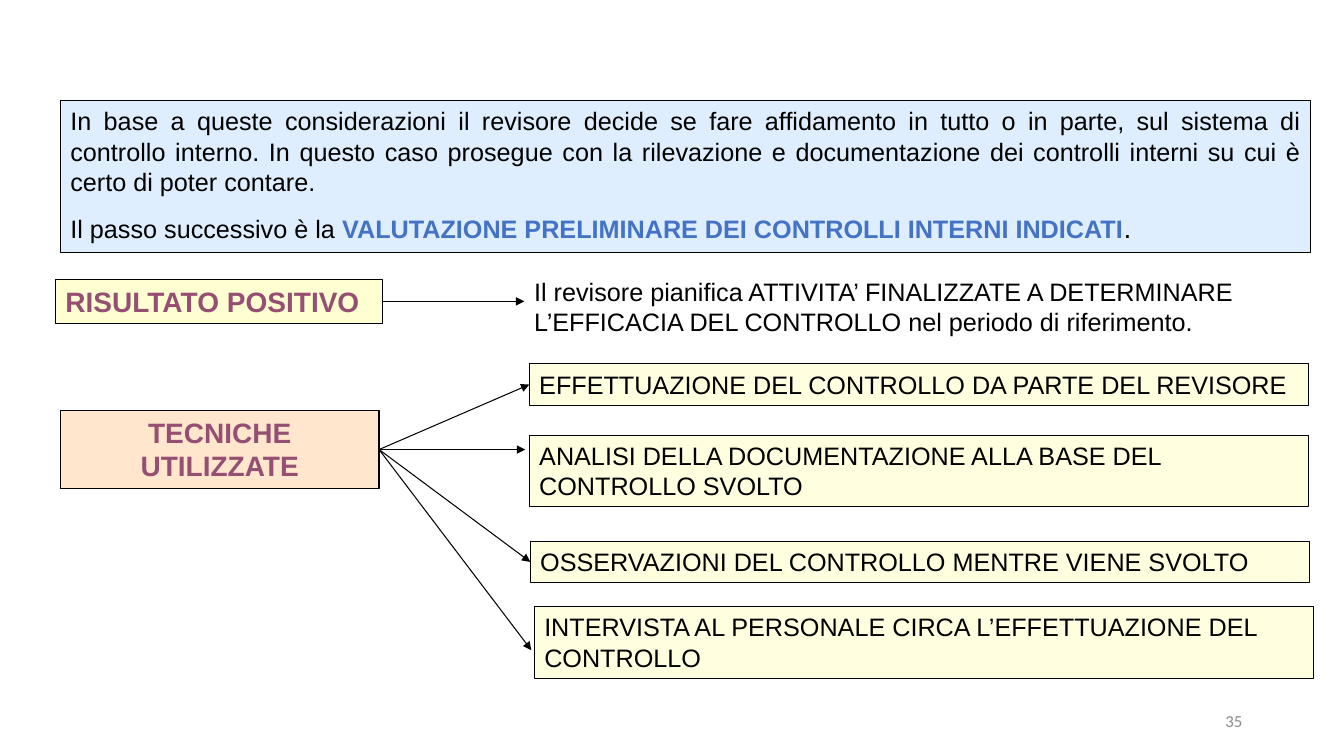
import dataclasses
import typing

import lxml.etree
import pptx
import pptx.dml.color
import pptx.enum.shapes
import pptx.enum.text
import pptx.oxml.ns
import pptx.util

Inches = pptx.util.Inches
Align = pptx.enum.text.PP_ALIGN
Point = tuple[float, float]
LEFT_SIDE, RIGHT_SIDE = 1, 3

BLACK, BLUE, PLUM, GREY = "000000", "4472C4", "954F72", "8C8C8C"


@dataclasses.dataclass
class Span:
    text: str
    color: str = BLACK
    size: float = 18
    bold: bool = False


@dataclasses.dataclass
class Box:
    left: float
    top: float
    width: float
    height: float
    paragraphs: list[list[Span]]
    fill: str | None = None
    opacity: int = 100
    align: Align = Align.LEFT
    font: str = "Arial"
    anchor: pptx.enum.text.MSO_ANCHOR = pptx.enum.text.MSO_ANCHOR.TOP


@dataclasses.dataclass
class Arrow:
    start_box: typing.Any
    end: Point
    end_box: typing.Any = None


def rgb(color: str) -> pptx.dml.color.RGBColor:
    return pptx.dml.color.RGBColor.from_string(color)


def add_element(parent, tag: str, **attributes: str):
    return lxml.etree.SubElement(parent, pptx.oxml.ns.qn(tag), attributes)


def set_font(font, span: Span, name: str) -> None:
    font.name = name
    font.size = pptx.util.Pt(span.size)
    font.bold = span.bold
    font.color.rgb = rgb(span.color)


def write_text(frame, box: Box) -> None:
    frame.word_wrap = True
    frame.vertical_anchor = box.anchor
    for index, spans in enumerate(box.paragraphs):
        para = frame.add_paragraph() if index else frame.paragraphs[0]
        para.alignment = box.align
        if index:
            para.space_before = pptx.util.Pt(10)
        for span in spans:
            run = para.add_run()
            run.text = span.text
            if len(spans) > 1:
                set_font(run.font, span, box.font)
        if len(spans) == 1:
            set_font(para.font, spans[0], box.font)


def add_box(page, box: Box):
    """Draw an outlined box, or a plain text box when it has no fill."""
    place = [Inches(n) for n in (box.left, box.top, box.width, box.height)]
    if box.fill is None:
        shape = page.shapes.add_textbox(*place)
    else:
        shape = page.shapes.add_shape(pptx.enum.shapes.MSO_SHAPE.RECTANGLE, *place)
        shape.shadow.inherit = False
        shape.fill.solid()
        shape.fill.fore_color.rgb = rgb(box.fill)
        color = shape.fill._xPr.find(".//" + pptx.oxml.ns.qn("a:srgbClr"))
        add_element(color, "a:alpha", val=str(box.opacity * 1000))
        shape.line.color.rgb = rgb(BLACK)
        shape.line.width = pptx.util.Pt(0.75)
    write_text(shape.text_frame, box)
    return shape


def add_arrow(page, arrow: Arrow) -> None:
    """Draw from the right side of one box to a point or the left side of another."""
    x, y = (Inches(n) for n in arrow.end)
    line = page.shapes.add_connector(pptx.enum.shapes.MSO_CONNECTOR.STRAIGHT, 0, 0, x, y)
    line.begin_connect(arrow.start_box, RIGHT_SIDE)
    if arrow.end_box is not None:
        line.end_connect(arrow.end_box, LEFT_SIDE)
    line.line.color.rgb = rgb(BLACK)
    line.line.width = pptx.util.Pt(0.75)
    add_element(line.line._get_or_add_ln(), "a:tailEnd", type="triangle")
    add_element(line._element.spPr, "a:effectLst")


def technique(left: float, top: float, height: float, text: str) -> Box:
    return Box(left, top, 7.73, height, [[Span(text)]], "FFFF99", 31)


INTRO = Box(0.6, 1, 12.4, 1.51, [
    [Span("In base a queste considerazioni il revisore decide se fare affidamento in tutto "
          "o in parte, sul sistema di controllo interno. In questo caso prosegue con la "
          "rilevazione e documentazione dei controlli interni su cui è certo di poter contare.")],
    [Span("Il passo successivo è la "),
     Span("VALUTAZIONE PRELIMINARE DEI CONTROLLI INTERNI INDICATI", BLUE, bold=True),
     Span(".", size=20)],
], "99CCFF", 32, Align.JUSTIFY)
RESULT = Box(0.55, 2.77, 3.24, 0.44,
             [[Span("RISULTATO POSITIVO", PLUM, 20, True)]], "FFFF99", 44)
PLAN = Box(5.2, 2.69, 7.7, 0.7, [[Span(
    "Il revisore pianifica ATTIVITA’ FINALIZZATE A DETERMINARE L’EFFICACIA DEL CONTROLLO "
    "nel periodo di riferimento.")]])
METHODS = Box(0.6, 4.07, 3.16, 0.78,
              [[Span("TECNICHE UTILIZZATE", PLUM, 20, True)]], "FFCC99", 49, Align.CENTER)
TECHNIQUES = [
    technique(5.25, 3.61, 0.41, "EFFETTUAZIONE DEL CONTROLLO DA PARTE DEL REVISORE"),
    technique(5.25, 4.32, 0.71, "ANALISI DELLA DOCUMENTAZIONE ALLA BASE DEL CONTROLLO SVOLTO"),
    technique(5.26, 5.37, 0.41, "OSSERVAZIONI DEL CONTROLLO MENTRE VIENE SVOLTO"),
    technique(5.3, 6.02, 0.71, "INTERVISTA AL PERSONALE CIRCA L’EFFETTUAZIONE DEL CONTROLLO"),
]
PAGE_NUMBER = Box(9.42, 6.95, 3, 0.4, [[Span("35", GREY, 12)]], align=Align.RIGHT,
                  font="Calibri", anchor=pptx.enum.text.MSO_ANCHOR.MIDDLE)


def main() -> None:
    deck = pptx.Presentation()
    deck.slide_width, deck.slide_height = Inches(13.33), Inches(7.5)
    page = deck.slides.add_slide(deck.slide_layouts.get_by_name("Blank"))

    add_box(page, INTRO)
    result = add_box(page, RESULT)
    add_box(page, PLAN)
    methods = add_box(page, METHODS)
    performing, _, observing, _ = [add_box(page, box) for box in TECHNIQUES]
    add_box(page, PAGE_NUMBER)

    for arrow in (
        Arrow(result, (5.2, 2.99)),
        Arrow(methods, (5.25, 3.82), performing),
        Arrow(methods, (5.21, 4.46)),
        Arrow(methods, (5.26, 5.58), observing),
        Arrow(methods, (5.27, 6.45)),
    ):
        add_arrow(page, arrow)

    deck.save("out.pptx")


if __name__ == "__main__":
    main()
